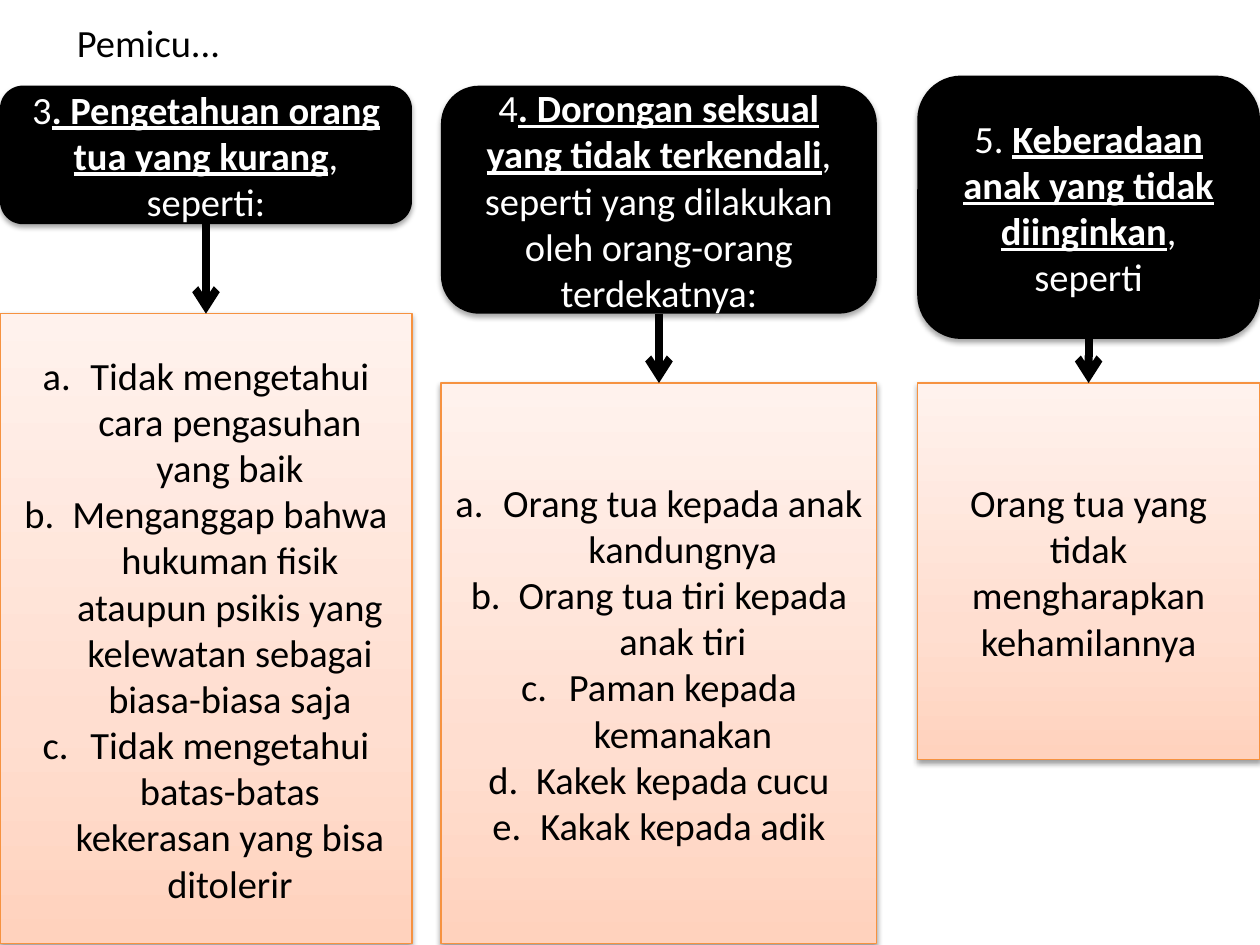
from dataclasses import dataclass

from pptx import Presentation, oxml, util as u
from pptx.dml import color
from pptx.enum import shapes, text
from pptx.oxml import ns


@dataclass(frozen=True)
class Theme:
    font: str = "Calibri"
    size: float = 22
    black: str = "000000"
    white: str = "FFFFFF"
    border: str = "F69240"
    gradient: tuple = ((0, "FFD2BD"), (35, "FFDED0"), (100, "FFF2ED"))
    border_width: float = 0.75
    arrow_width: float = 4.5
    indent: float = 0.38


def rgb(value):
    return color.RGBColor.from_string(value)


def element(tag, attributes="", content=""):
    return oxml.parse_xml(
        f"<a:{tag} {ns.nsdecls('a')} {attributes}>{content}</a:{tag}>"
    )


class SlideBuilder:
    COLUMNS, ROWS = 100, 75

    def __init__(self, presentation, theme):
        self.theme = theme
        self.column = presentation.slide_width / self.COLUMNS
        self.row = presentation.slide_height / self.ROWS
        self.slide = presentation.slides.add_slide(presentation.slide_layouts[5])

    def place(self, left, top, width, height):
        return (
            round(left * self.column),
            round(top * self.row),
            round(width * self.column),
            round(height * self.row),
        )

    def format_run(self, run, ink, emphasis=None):
        run.font.name = self.theme.font
        run.font.size = u.Pt(self.theme.size)
        run.font.color.rgb = rgb(ink)
        run.font.bold = run.font.underline = emphasis

    def title(self, wording, *area):
        title = self.slide.shapes.title
        title.left, title.top, title.width, title.height = self.place(*area)
        frame = title.text_frame
        frame.text = wording
        frame.vertical_anchor = text.MSO_ANCHOR.MIDDLE
        frame.paragraphs[0].alignment = text.PP_ALIGN.LEFT
        self.format_run(frame.paragraphs[0].runs[0], self.theme.black)

    def panel(self, kind, area, opacity, distance):
        shape = self.slide.shapes.add_shape(kind, *self.place(*area))
        shape.shadow.inherit = False
        effects = shape.element.spPr.find(ns.qn("a:effectLst"))
        effects.append(element(
            "outerShdw",
            f'blurRad="{u.Pt(3.1)}" dist="{u.Pt(distance)}" '
            'dir="5400000" rotWithShape="0"',
            f'<a:srgbClr val="{self.theme.black}">'
            f'<a:alpha val="{opacity * 1000}"/></a:srgbClr>',
        ))
        shape.text_frame.word_wrap = True
        shape.text_frame.vertical_anchor = text.MSO_ANCHOR.MIDDLE
        return shape

    def header(self, area, number, emphasized, ending):
        shape = self.panel(shapes.MSO_SHAPE.ROUNDED_RECTANGLE, area, 35, 1.8)
        shape.fill.solid()
        shape.fill.fore_color.rgb = rgb(self.theme.black)
        shape.line.fill.background()
        paragraph = shape.text_frame.paragraphs[0]
        paragraph.alignment = text.PP_ALIGN.CENTER
        for wording in (number, emphasized, ending):
            run = paragraph.add_run()
            run.text = wording
            self.format_run(run, self.theme.white, wording == emphasized)
        return shape

    def box(self, area, items):
        shape = self.panel(shapes.MSO_SHAPE.RECTANGLE, area, 38, 1.6)
        self.fill_gradient(shape)
        shape.line.color.rgb = rgb(self.theme.border)
        shape.line.width = u.Pt(self.theme.border_width)
        shape.text_frame.text = "\n".join(items)
        for paragraph in shape.text_frame.paragraphs:
            paragraph.alignment = text.PP_ALIGN.CENTER
            self.format_run(paragraph.runs[0], self.theme.black)
            if len(items) > 1:
                self.letter(paragraph)
        return shape

    def fill_gradient(self, shape):
        shape.fill.gradient()
        stops = "".join(
            f'<a:gs pos="{position * 1000}"><a:srgbClr val="{value}"/></a:gs>'
            for position, value in self.theme.gradient
        )
        properties = shape.element.spPr
        properties.replace(
            properties.find(ns.qn("a:gradFill")),
            element("gradFill", 'rotWithShape="1"',
                    f'<a:gsLst>{stops}</a:gsLst>'
                    '<a:lin ang="16200000" scaled="0"/>'),
        )

    def letter(self, paragraph):
        properties = paragraph._p.get_or_add_pPr()
        indent = u.Inches(self.theme.indent)
        properties.set("marL", str(indent))
        properties.set("indent", str(-indent))
        properties.append(element("buFont", 'typeface="+mj-lt"'))
        properties.append(element("buAutoNum", 'type="alphaLcPeriod"'))

    def arrow(self, start, end):
        connector = self.slide.shapes.add_connector(
            shapes.MSO_CONNECTOR.STRAIGHT, 0, 0, 0, 0
        )
        connector.begin_connect(start, 2)
        connector.end_connect(end, 0)
        connector.line.color.rgb = rgb(self.theme.black)
        connector.line.width = u.Pt(self.theme.arrow_width)
        properties = connector.element.spPr
        properties.find(ns.qn("a:ln")).append(element("tailEnd", 'type="arrow"'))
        properties.append(element("effectLst"))

    def cause(self, left, width, header_rows, box_rows, heading, items):
        header_top, header_height = header_rows
        box_top, box_height = box_rows
        header = self.header((left, header_top, width, header_height), *heading)
        box = self.box((left, box_top, width, box_height), items)
        self.arrow(header, box)


CAUSES = [
    (0, 32.7, (6.8, 11), (24.9, 50),
     ("3", ". Pengetahuan orang tua yang kurang", ", seperti:"),
     ["Tidak mengetahui cara pengasuhan yang baik",
      "Menganggap bahwa hukuman fisik ataupun psikis yang kelewatan "
      "sebagai biasa-biasa saja",
      "Tidak mengetahui batas-batas kekerasan yang bisa ditolerir"]),
    (35, 34.6, (6.8, 18.1), (30.4, 44.5),
     ("4", ". Dorongan seksual yang tidak terkendali",
      ", seperti yang dilakukan oleh orang-orang terdekatnya:"),
     ["Orang tua kepada anak kandungnya",
      "Orang tua tiri kepada anak tiri",
      "Paman kepada kemanakan",
      "Kakek kepada cucu",
      "Kakak kepada adik"]),
    (72.8, 27.2, (6, 20.9), (30.4, 29.9),
     ("5. ", "Keberadaan anak yang tidak diinginkan", ", seperti"),
     ["Orang tua yang tidak mengharapkan kehamilannya"]),
]


def main():
    presentation = Presentation()
    presentation.slide_width = u.Inches(10)
    presentation.slide_height = u.Inches(7.5)
    builder = SlideBuilder(presentation, Theme())
    builder.title("Pemicu...", 5.1, 0.3, 90, 6.1)
    for cause in CAUSES:
        builder.cause(*cause)
    presentation.save("out.pptx")


if __name__ == "__main__":
    main()
